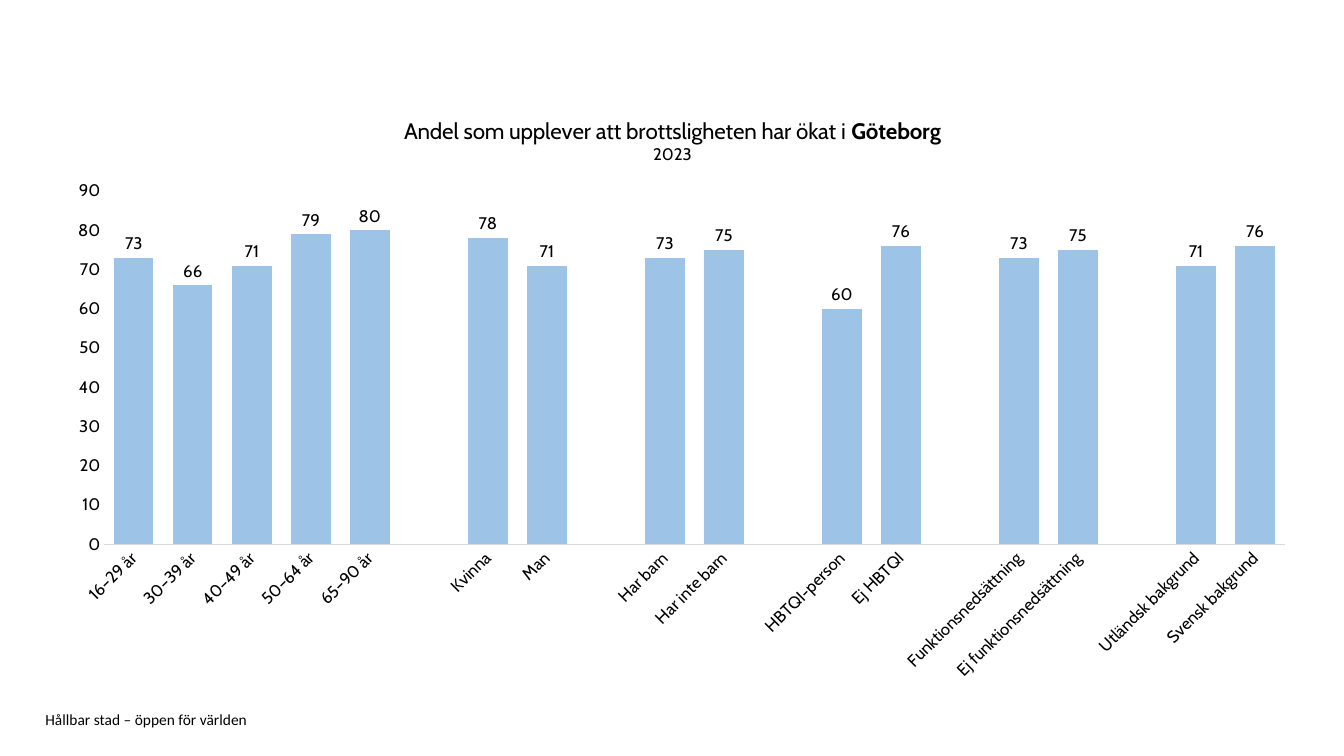
"""Build a slide with a column chart of perceived crime growth by population group."""
from lxml.etree import SubElement
from pptx import Presentation
from pptx.chart.data import CategoryChartData
from pptx.dml.color import RGBColor
from pptx.enum.chart import XL_CHART_TYPE, XL_LABEL_POSITION, XL_TICK_MARK
from pptx.enum.text import MSO_ANCHOR
from pptx.oxml import parse_xml
from pptx.oxml.ns import nsdecls, qn
from pptx.util import Inches, Pt

BLACK = RGBColor(0x00, 0x00, 0x00)
SKY = RGBColor(0x9D, 0xC3, 0xE6)
GREY = RGBColor(0xD9, 0xD9, 0xD9)

GROUPS = [
    [("16–29 år", 73), ("30–39 år", 66), ("40–49 år", 71), ("50–64 år", 79), ("65–90 år", 80)],
    [("Kvinna", 78), ("Man", 71)],
    [("Har barn", 73), ("Har inte barn", 75)],
    [("HBTQI-person", 60), ("Ej HBTQI", 76)],
    [("Funktionsnedsättning", 73), ("Ej funktionsnedsättning", 75)],
    [("Utländsk bakgrund", 71), ("Svensk bakgrund", 76)],
]
TITLE_LINES = [
    [("Andel som upplever att brottsligheten har ökat i ", 16, False), ("Göteborg", 16, True)],
    [("2023", 12, False)],
]


class SlideBuilder:
    """Hold the style and the current slide."""

    def __init__(self, page):
        self.page = page
        self.chart_font = "Cabin"
        self.footer_font = "Calibri"

    def style(self, font, name, size, bold=False):
        font.name, font.size, font.bold = name, Pt(size), bold
        font.color.rgb = BLACK

    def footer(self, text, left, top, width, height):
        box = self.page.shapes.add_textbox(Inches(left), Inches(top), Inches(width), Inches(height))
        frame = box.text_frame
        frame.word_wrap = True
        frame.vertical_anchor = MSO_ANCHOR.MIDDLE
        frame.margin_left = frame.margin_right = frame.margin_top = frame.margin_bottom = 0
        frame.text = text
        self.style(frame.paragraphs[0].runs[0].font, self.footer_font, 11)

    def column_chart(self, groups, left, top, width, height):
        data = CategoryChartData()
        bars = list(groups[0])
        for group in groups[1:]:
            bars += [("", None), *group]
        data.categories = [label for label, value in bars]
        data.add_series("Andel", [value for label, value in bars])
        chart = self.page.shapes.add_chart(
            XL_CHART_TYPE.COLUMN_CLUSTERED,
            Inches(left), Inches(top), Inches(width), Inches(height), data,
        ).chart
        self.style(chart.font, self.chart_font, 12)
        chart.has_legend = False
        self.format_columns(chart.plots[0])
        self.format_axes(chart)
        return chart

    def format_columns(self, plot):
        plot.gap_width = 50
        plot.vary_by_categories = False
        fill = plot.series[0].format.fill
        fill.solid()
        fill.fore_color.rgb = SKY
        plot.has_data_labels = True
        labels = plot.data_labels
        labels.show_value = True
        labels.position = XL_LABEL_POSITION.OUTSIDE_END
        self.style(labels.font, self.chart_font, 12)

    def format_axes(self, chart):
        for axis in (chart.category_axis, chart.value_axis):
            axis.major_tick_mark = axis.minor_tick_mark = XL_TICK_MARK.NONE
            axis.has_major_gridlines = False
            self.style(axis.tick_labels.font, self.chart_font, 12)
        baseline = chart.category_axis.format.line
        baseline.color.rgb = GREY
        baseline.width = Pt(0.75)
        category_body = chart.category_axis._element.find(qn("c:txPr")).find(qn("a:bodyPr"))
        category_body.set("rot", "-2700000")
        category_body.set("vert", "horz")
        scale = chart.value_axis
        scale.minimum_scale, scale.maximum_scale, scale.major_unit = 0, 90, 10
        scale.format.line.fill.background()

    def chart_title(self, chart, lines):
        frame = chart.chart_title.text_frame
        for index, line in enumerate(lines):
            para = frame.add_paragraph() if index else frame.paragraphs[0]
            for text, size, bold in line:
                span = para.add_run()
                span.text = text
                self.style(span.font, self.chart_font, size, bold)
        chart.chart_title.include_in_layout = False

    def plot_layout(self, chart, x, y, w, h):
        area = chart._chartSpace.chart.plotArea
        for old in area.findall(qn("c:layout")):
            area.remove(old)
        layout = parse_xml(f"<c:layout {nsdecls('c')}><c:manualLayout/></c:layout>")
        settings = [("layoutTarget", "inner"), ("xMode", "edge"), ("yMode", "edge"),
                    ("x", x), ("y", y), ("w", w), ("h", h)]
        for tag, value in settings:
            SubElement(layout[0], qn(f"c:{tag}")).set("val", str(value))
        area.insert(0, layout)


def main():
    deck = Presentation()
    deck.slide_width, deck.slide_height = Inches(13.33), Inches(7.5)
    builder = SlideBuilder(deck.slides.add_slide(deck.slide_layouts[6]))
    builder.footer("Hållbar stad – öppen för världen", 0.45, 7.06, 9.45, 0.16)
    chart = builder.column_chart(GROUPS, 0.45, 0.95, 12.44, 6.26)
    builder.chart_title(chart, TITLE_LINES)
    builder.plot_layout(chart, 0.047, 0.151, 0.941, 0.56)
    deck.save("out.pptx")


if __name__ == "__main__":
    main()
